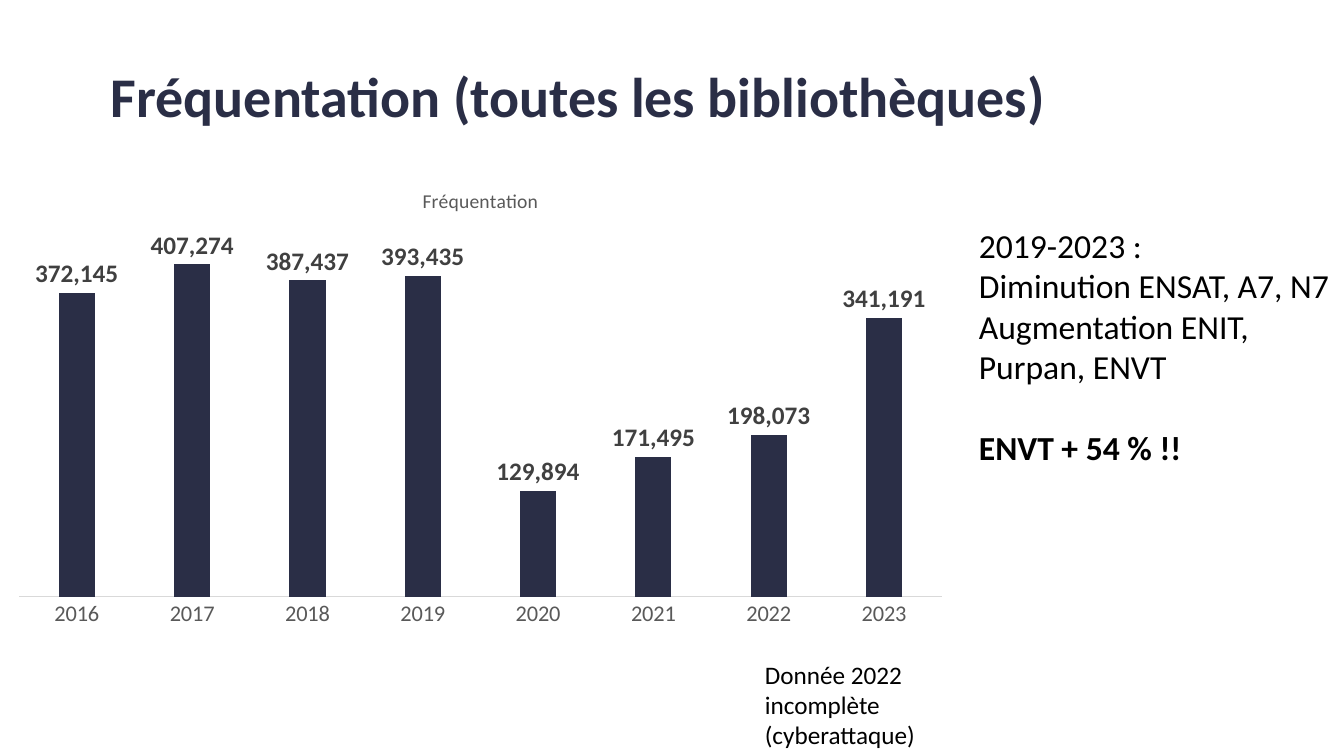
from lxml import etree
from pptx import Presentation
from pptx.chart.data import CategoryChartData
from pptx.dml.color import RGBColor
from pptx.enum.chart import XL_CHART_TYPE as CT, XL_LABEL_POSITION as LP, XL_TICK_MARK as TM
from pptx.enum.text import MSO_ANCHOR as ANCHOR
from pptx.oxml import parse_xml
from pptx.oxml.ns import nsdecls
from pptx.util import Emu, Pt

NAVY = RGBColor(0x2A, 0x2E, 0x46)
BLACK = RGBColor(0, 0, 0)
LABEL_GREY = RGBColor(0x40, 0x40, 0x40)
AXIS_GREY = RGBColor(0x59, 0x59, 0x59)
LINE_GREY = RGBColor(0xD9, 0xD9, 0xD9)
FONT = "Calibri"
VISITS = {
    "2016": 372145, "2017": 407274, "2018": 387437, "2019": 393435,
    "2020": 129894, "2021": 171495, "2022": 198073, "2023": 341191,
}


def px(n):
    """Turn px into EMU at 100.8 px to the inch."""
    return Emu(round(n * 914400 / 100.8))


def set_font(font, size, color, bold=False):
    """Apply the slide's typeface with a size, colour and weight."""
    font.name, font.size, font.bold = FONT, Pt(size), bold
    font.color.rgb = color


def add_text(s, box, lines, size, color=BLACK, bold=False, anchor=ANCHOR.TOP):
    """Place a wrapped text box with one paragraph per line."""
    tf = s.shapes.add_textbox(*map(px, box)).text_frame
    tf.word_wrap = True
    tf.vertical_anchor = anchor
    tf.text = "\n".join(lines)
    for p in tf.paragraphs:
        set_font(p.font, size, color, bold)
    return tf


def add_title(s, box):
    """Place the slide heading."""
    tf = add_text(s, box, ["Fréquentation (toutes les bibliothèques)"], 40, NAVY, True, ANCHOR.MIDDLE)
    tf.paragraphs[0].line_spacing = 0.9


def set_plot_layout(chart, **fractions):
    """Fix the inner plot area as fractions of the chart."""
    layout = parse_xml(f"<c:layout {nsdecls('c')}><c:manualLayout/></c:layout>")
    settings = {"layoutTarget": "inner", "xMode": "edge", "yMode": "edge", **fractions}
    ns = layout.nsmap["c"]
    for tag, val in settings.items():
        etree.SubElement(layout[0], f"{{{ns}}}{tag}").set("val", str(val))
    chart.plots[0]._element.getparent().insert(0, layout)


def add_visits_chart(s, box):
    """Place the column chart of yearly visits."""
    data = CategoryChartData(number_format="#,##0")
    data.categories = list(VISITS)
    data.add_series("Fréquentation", VISITS.values())
    chart = s.shapes.add_chart(CT.COLUMN_CLUSTERED, *map(px, box), data).chart
    set_font(chart.font, 10, BLACK)
    chart.has_legend = False
    chart.has_title = True
    title = chart.chart_title
    title.include_in_layout = False
    title.text_frame.text = "Fréquentation"
    set_font(title.text_frame.paragraphs[0].font, 14, AXIS_GREY)

    years = chart.category_axis
    years.major_tick_mark = years.minor_tick_mark = TM.NONE
    years.format.line.color.rgb = LINE_GREY
    years.format.line.width = Pt(0.75)
    set_font(years.tick_labels.font, 16, AXIS_GREY)
    counts = chart.value_axis
    counts.visible = counts.has_major_gridlines = False
    counts.minimum_scale, counts.maximum_scale = 0, 450000

    plot = chart.plots[0]
    plot.gap_width, plot.overlap, plot.vary_by_categories = 219, -27, False
    fill = plot.series[0].format.fill
    fill.solid()
    fill.fore_color.rgb = NAVY
    plot.has_data_labels = True
    labels = plot.data_labels
    labels.show_value = True
    labels.position = LP.OUTSIDE_END
    labels.number_format, labels.number_format_is_linked = "#,##0", False
    set_font(labels.font, 18, LABEL_GREY, True)
    set_plot_layout(chart, x=0.02, y=0.13, w=0.96, h=0.79)


def add_comments(s, box):
    """Place the remarks on the 2019-2023 trend."""
    lines = ["2019-2023 :", "Diminution ENSAT, A7, N7", "Augmentation ENIT, Purpan, ENVT", "ENVT + 54 % !!"]
    p = add_text(s, box, lines, 24).paragraphs[-1]
    p.font.bold = True
    p.space_before = Pt(29)


def main():
    """Build and save the slide."""
    prs = Presentation()
    prs.slide_width, prs.slide_height = px(1344), px(756)
    s = prs.slides.add_slide(prs.slide_layouts[6])
    add_title(s, (101, 26, 1159, 146))
    add_text(s, (755, 654, 247, 102), ["Donnée 2022 incomplète (cyberattaque)"], 18)
    add_visits_chart(s, (0, 169, 961, 465))
    add_comments(s, (969, 220, 376, 254))
    prs.save("out.pptx")


if __name__ == "__main__":
    main()
